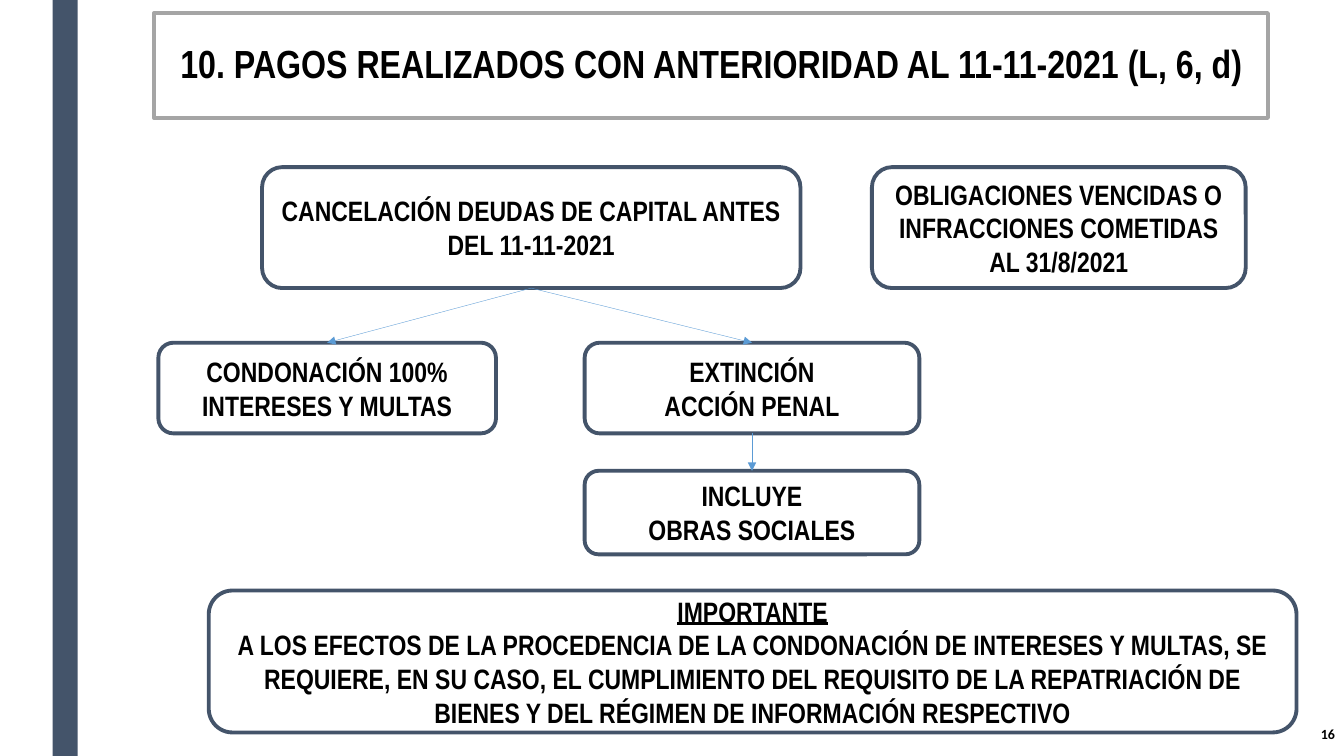
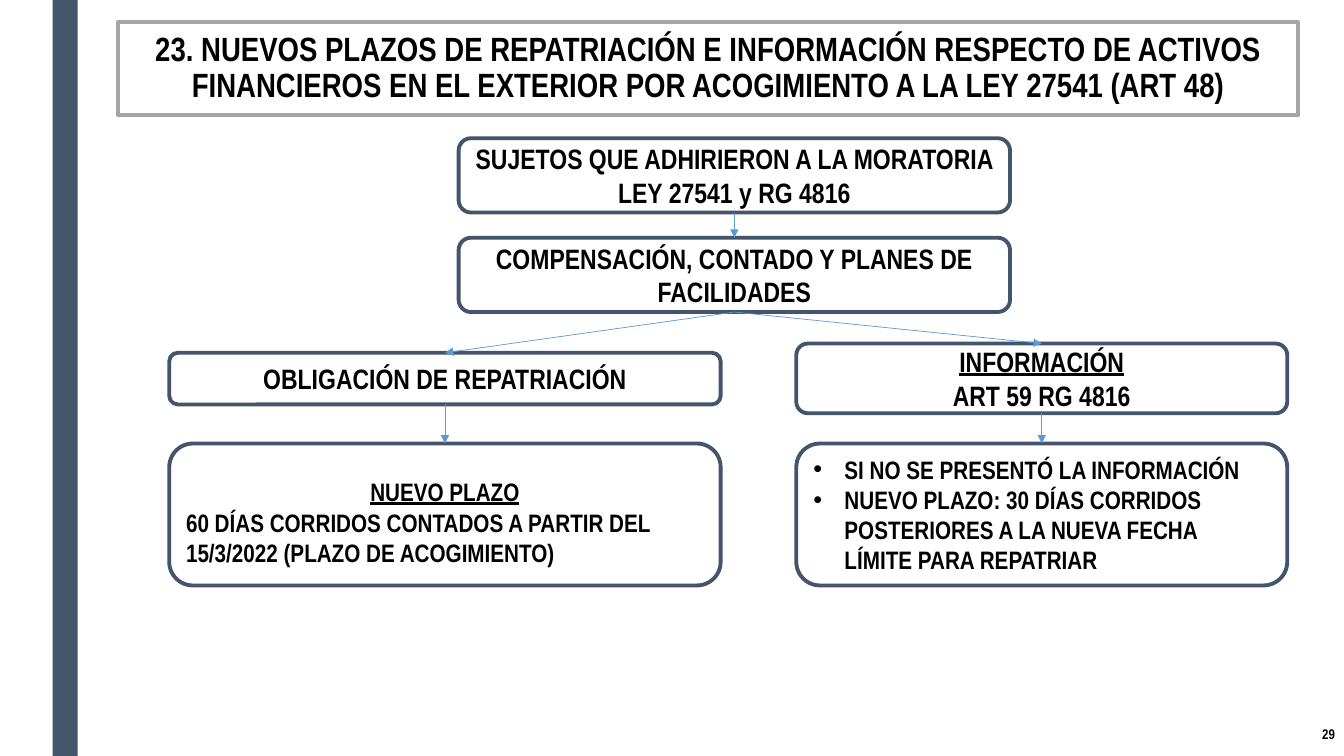
from lxml import etree
from pptx import Presentation
from pptx import util as u
from pptx.dml.color import RGBColor
from pptx.enum import shapes, text
from pptx.oxml import ns

COLUMNS, ROWS = 32, 18
CELL = u.Inches(7.5) / ROWS
ROUNDED = shapes.MSO_SHAPE.ROUNDED_RECTANGLE
CENTER, LEFT, RIGHT = text.PP_ALIGN.CENTER, text.PP_ALIGN.LEFT, text.PP_ALIGN.RIGHT
TOP, BOTTOM = 0, 2


def color(value):
    return RGBColor.from_string(value)


def grid(*cells):
    return [u.Emu(round(cell * CELL)) for cell in cells]


class Deck:
    FONT = "Arial Narrow"
    NAVY, GRAY, BLUE, BLACK, WHITE = "44546A", "A5A5A5", "5B9BD5", "000000", "FFFFFF"
    BORDER = 2.75
    TITLE_ONLY, TITLE_AND_LIST = 5, 1

    def __init__(self):
        self.presentation = Presentation()
        self.presentation.slide_width, self.presentation.slide_height = grid(COLUMNS, ROWS)
        self.slide = None

    def start(self, layout, title, at, size, number, number_font=FONT):
        self.slide = self.presentation.slides.add_slide(self.presentation.slide_layouts[layout])
        band = self.slide.shapes.add_shape(shapes.MSO_SHAPE.RECTANGLE, *grid(1.25, 0, 0.6, ROWS))
        self.paint(band, self.NAVY)
        heading = self.slide.shapes.title
        self.place(heading, at)
        self.paint(heading, self.WHITE, self.GRAY)
        self.add_text(heading, [title], size)
        heading.text_frame.paragraphs[0].line_spacing = 0.89
        footer = self.slide.shapes.add_textbox(*grid(27.82, 16.94, 4.2, 1.06))
        self.add_text(footer, [number], 10, RIGHT, font=number_font)

    def place(self, shape, at):
        shape.left, shape.top, shape.width, shape.height = grid(*at)

    def paint(self, shape, fill, line=None):
        shape.shadow.inherit = False
        shape.fill.solid()
        shape.fill.fore_color.rgb = color(fill)
        if line:
            shape.line.color.rgb = color(line)
            shape.line.width = u.Pt(self.BORDER)
        else:
            shape.line.fill.background()

    def add_text(self, shape, lines, size, align=CENTER, heading=None, font=FONT):
        frame = shape.text_frame
        frame.word_wrap = True
        frame.auto_size = text.MSO_AUTO_SIZE.NONE
        frame.vertical_anchor = text.MSO_ANCHOR.MIDDLE
        content = [heading, *lines] if heading else lines
        for index, words in enumerate(content):
            paragraph = frame.add_paragraph() if index else frame.paragraphs[0]
            is_heading = bool(heading) and index == 0
            paragraph.alignment = CENTER if is_heading else align
            paragraph.space_before = u.Pt(0)
            run = paragraph.add_run()
            run.text = words
            run.font.name = font
            run.font.size = u.Pt(size)
            run.font.bold = True
            run.font.underline = is_heading
            run.font.color.rgb = color(self.BLACK)

    def box(self, at, lines, size=20, align=CENTER, heading=None):
        shape = self.slide.shapes.add_shape(ROUNDED, *grid(*at))
        self.paint(shape, self.WHITE, self.NAVY)
        self.add_text(shape, lines, size, align, heading)
        return shape

    def bullets(self, at, lines, size):
        shape = self.slide.placeholders[1]
        self.place(shape, at)
        properties = shape.element.spPr
        outline = etree.SubElement(properties, ns.qn("a:prstGeom"), prst="roundRect")
        etree.SubElement(outline, ns.qn("a:avLst"))
        self.paint(shape, self.WHITE, self.NAVY)
        self.add_text(shape, lines, size, LEFT)
        indent = u.Inches(0.31)
        for paragraph in shape.text_frame.paragraphs:
            layout = paragraph._p.get_or_add_pPr()
            layout.set("marL", str(indent))
            layout.set("indent", str(-indent))
            etree.SubElement(layout, ns.qn("a:buFont"), typeface="Arial")
            etree.SubElement(layout, ns.qn("a:buChar"), char="•")
        return shape

    def arrows(self, width, *pairs):
        for source, target in pairs:
            connector = self.slide.shapes.add_connector(shapes.MSO_CONNECTOR.STRAIGHT, 0, 0, 0, 0)
            connector.begin_connect(source, BOTTOM)
            connector.end_connect(target, TOP)
            connector.line.color.rgb = color(self.BLUE)
            connector.line.width = u.Pt(width)
            properties = connector.element.spPr
            etree.SubElement(properties.find(ns.qn("a:ln")), ns.qn("a:tailEnd"), type="triangle")
            etree.SubElement(properties, ns.qn("a:effectLst"))


def build_prior_payments(deck):
    deck.start(deck.TITLE_ONLY, "10. PAGOS REALIZADOS CON ANTERIORIDAD AL 11-11-2021 (L, 6, d)",
               (3.67, 0.31, 26.52, 2.5), 28, "16", "Calibri")
    top, middle, column, width = 3.98, 8.16, 13.92, 7.97
    settlement = deck.box((6.24, top, 12.82, 2.88),
                          ["CANCELACIÓN DEUDAS DE CAPITAL ANTES DEL 11-11-2021"])
    waiver = deck.box((3.77, middle, 8.04, 2.16), ["CONDONACIÓN 100%", "INTERESES Y MULTAS"])
    extinction = deck.box((column, middle, width, 2.16), ["EXTINCIÓN", "ACCIÓN PENAL"])
    health_funds = deck.box((column, 11.21, width, 1.99), ["INCLUYE", "OBRAS SOCIALES"])
    deck.box((20.76, top, 8.9, 2.88),
             ["OBLIGACIONES VENCIDAS O INFRACCIONES COMETIDAS AL 31/8/2021"])
    deck.box((4.97, 14.06, 25.9, 3.38),
             ["A LOS EFECTOS DE LA PROCEDENCIA DE LA CONDONACIÓN DE INTERESES Y MULTAS, "
              "SE REQUIERE, EN SU CASO, EL CUMPLIMIENTO DEL REQUISITO DE LA REPATRIACIÓN "
              "DE BIENES Y DEL RÉGIMEN DE INFORMACIÓN RESPECTIVO"], heading="IMPORTANTE")
    deck.arrows(0.25, (settlement, waiver), (settlement, extinction), (extinction, health_funds))


def build_new_deadlines(deck):
    deck.start(deck.TITLE_AND_LIST,
               "23. NUEVOS PLAZOS DE REPATRIACIÓN E INFORMACIÓN RESPECTO DE ACTIVOS "
               "FINANCIEROS EN EL EXTERIOR POR ACOGIMIENTO A LA LEY 27541 (ART 48)",
               (2.81, 0.53, 28.1, 2.21), 24, "29")
    center, left, right = 10.92, 4.03, 18.96
    wide, narrow = 13.13, 11.69
    details, height = 10.56, 3.38
    subjects = deck.box((center, 3.29, wide, 1.77),
                        ["SUJETOS QUE ADHIRIERON A LA MORATORIA LEY 27541 y RG 4816"])
    plans = deck.box((center, 5.66, wide, 1.77),
                     ["COMPENSACIÓN, CONTADO Y PLANES DE FACILIDADES"])
    repatriation = deck.box((left, 8.4, wide, 1.23), ["OBLIGACIÓN DE REPATRIACIÓN"])
    information = deck.box((right, 8.18, narrow, 1.66), ["ART 59 RG 4816"], heading="INFORMACIÓN")
    deadline = deck.box((left, details, wide, height),
                        ["60 DÍAS CORRIDOS CONTADOS A PARTIR DEL 15/3/2022 (PLAZO DE ACOGIMIENTO)"],
                        18, LEFT, "NUEVO PLAZO")
    deadline.text_frame.paragraphs[0].line_spacing = 1.5
    filing = deck.bullets((right, details, narrow, height),
                          ["SI NO SE PRESENTÓ LA INFORMACIÓN",
                           "NUEVO PLAZO: 30 DÍAS CORRIDOS POSTERIORES A LA NUEVA FECHA "
                           "LÍMITE PARA REPATRIAR"], 18)
    deck.arrows(0.5, (subjects, plans), (plans, repatriation), (plans, information),
                (repatriation, deadline), (information, filing))


def main():
    deck = Deck()
    build_prior_payments(deck)
    build_new_deadlines(deck)
    deck.presentation.save("out.pptx")


if __name__ == "__main__":
    main()
